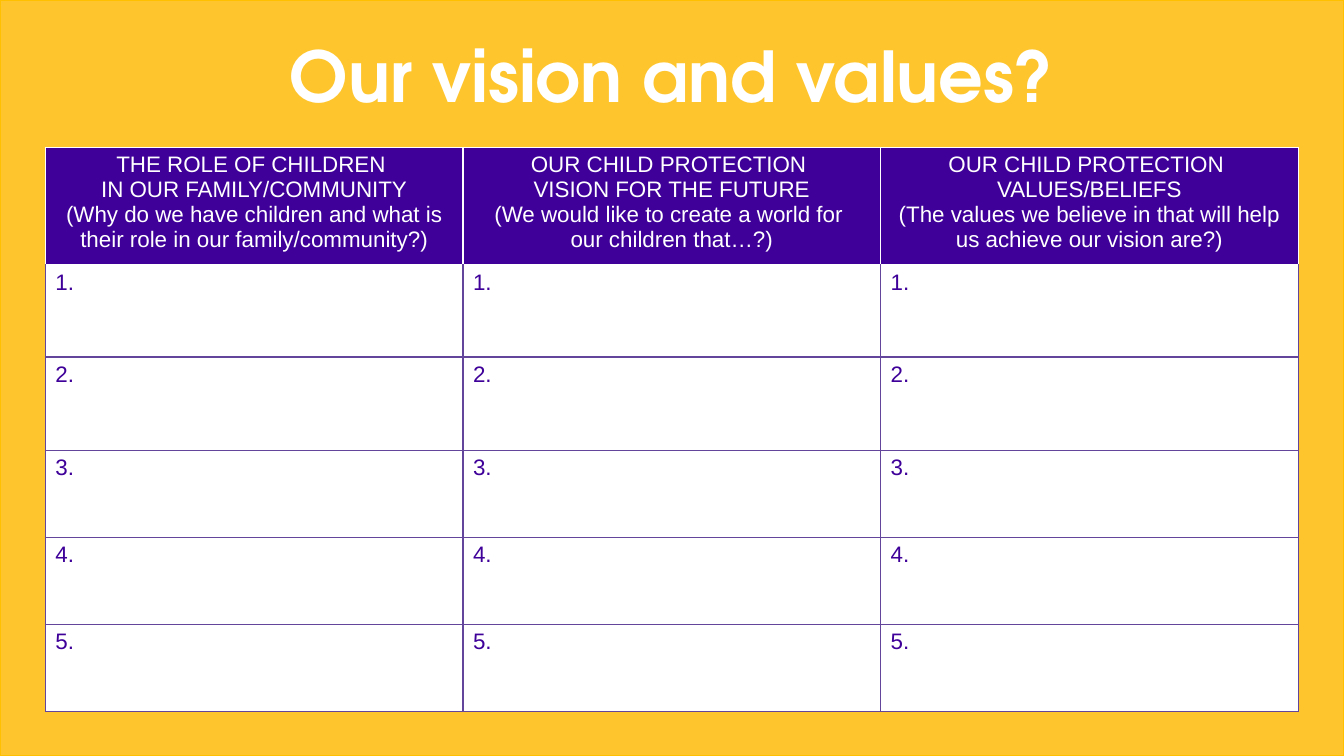
from dataclasses import dataclass

from lxml.etree import SubElement
from pptx import Presentation
from pptx.dml.color import RGBColor
from pptx.enum.shapes import MSO_SHAPE
from pptx.enum.text import MSO_AUTO_SIZE, PP_ALIGN
from pptx.oxml.ns import qn
from pptx.slide import Slide
from pptx.table import _Cell
from pptx.text.text import TextFrame
from pptx.util import Pt

COLORS = {
    "yellow": "FEC52C",
    "amber": "FFC000",
    "purple": "3E0099",
    "grid": "63459B",
    "white": "FFFFFF",
}
SLIDE_WIDTH, SLIDE_HEIGHT = 960, 540
COLUMN_WIDTH = 298.3
ROW_HEIGHTS = [83.5, 65.7, 67, 62.1, 62.1, 62.1]


@dataclass(frozen=True)
class CellStyle:
    fill: str
    text: str
    align: PP_ALIGN
    side_border: str
    top_border: str
    bottom_border: str


HEADING = CellStyle("purple", "white", PP_ALIGN.CENTER, "white", "white", "white")
FIRST_ANSWER = CellStyle("white", "purple", PP_ALIGN.LEFT, "grid", "white", "grid")
ANSWER = CellStyle("white", "purple", PP_ALIGN.LEFT, "grid", "grid", "grid")

TOPICS = [
    "THE ROLE OF CHILDREN \nIN OUR FAMILY/COMMUNITY\n"
    "(Why do we have children and what is their role in our family/community?)",
    "OUR CHILD PROTECTION \nVISION FOR THE FUTURE\n"
    "(We would like to create a world for \nour children that…?)",
    "OUR CHILD PROTECTION \nVALUES/BELIEFS\n"
    "(The values we believe in that will help us achieve our vision are?)",
]


def rgb(name: str) -> RGBColor:
    return RGBColor.from_string(COLORS[name])


def write(frame: TextFrame, text: str, font: str, size: float,
          color: str, align: PP_ALIGN, bold: bool = False) -> None:
    frame.text = text
    for paragraph in frame.paragraphs:
        paragraph.alignment = align
        for run in paragraph.runs:
            run.font.name = font
            run.font.size = Pt(size)
            run.font.bold = bold
            run.font.color.rgb = rgb(color)


def add_borders(cell: _Cell, style: CellStyle) -> None:
    properties = cell._tc.get_or_add_tcPr()
    sides = {"lnL": style.side_border, "lnR": style.side_border,
             "lnT": style.top_border, "lnB": style.bottom_border}
    for side, color in sides.items():
        border = SubElement(properties, qn(f"a:{side}"), w=str(Pt(1)))
        solid = SubElement(border, qn("a:solidFill"))
        SubElement(solid, qn("a:srgbClr"), val=COLORS[color])


def draw_cell(cell: _Cell, text: str, style: CellStyle) -> None:
    add_borders(cell, style)
    cell.fill.solid()
    cell.fill.fore_color.rgb = rgb(style.fill)
    write(cell.text_frame, text, "Arial", 16, style.text, style.align)


def draw_backdrop(slide: Slide) -> None:
    backdrop = slide.shapes.add_shape(
        MSO_SHAPE.RECTANGLE, Pt(0), Pt(0), Pt(SLIDE_WIDTH), Pt(SLIDE_HEIGHT))
    backdrop.shadow.inherit = False
    backdrop.fill.solid()
    backdrop.fill.fore_color.rgb = rgb("yellow")
    backdrop.line.color.rgb = rgb("amber")
    backdrop.line.width = Pt(1)


def draw_title(slide: Slide) -> None:
    title = slide.shapes.add_textbox(Pt(73.4), Pt(19.4), Pt(813), Pt(67.7)).text_frame
    title.word_wrap = True
    title.auto_size = MSO_AUTO_SIZE.SHAPE_TO_FIT_TEXT
    write(title, "Our vision and values?", "TeX Gyre Adventor", 50,
          "white", PP_ALIGN.CENTER, bold=True)


def draw_worksheet(slide: Slide) -> None:
    worksheet = slide.shapes.add_table(
        len(ROW_HEIGHTS), len(TOPICS), Pt(32.4), Pt(105.3),
        Pt(COLUMN_WIDTH * len(TOPICS)), Pt(sum(ROW_HEIGHTS))).table
    worksheet.horz_banding = False
    for column in worksheet.columns:
        column.width = Pt(COLUMN_WIDTH)
    for number, height in enumerate(ROW_HEIGHTS):
        worksheet.rows[number].height = Pt(height)
        for index, topic in enumerate(TOPICS):
            cell = worksheet.cell(number, index)
            if number == 0:
                draw_cell(cell, topic, HEADING)
            else:
                draw_cell(cell, f"{number}.", FIRST_ANSWER if number == 1 else ANSWER)


def main() -> None:
    presentation = Presentation()
    presentation.slide_width = Pt(SLIDE_WIDTH)
    presentation.slide_height = Pt(SLIDE_HEIGHT)
    slide = presentation.slides.add_slide(presentation.slide_layouts[6])
    draw_backdrop(slide)
    draw_title(slide)
    draw_worksheet(slide)
    presentation.save("out.pptx")


if __name__ == "__main__":
    main()
